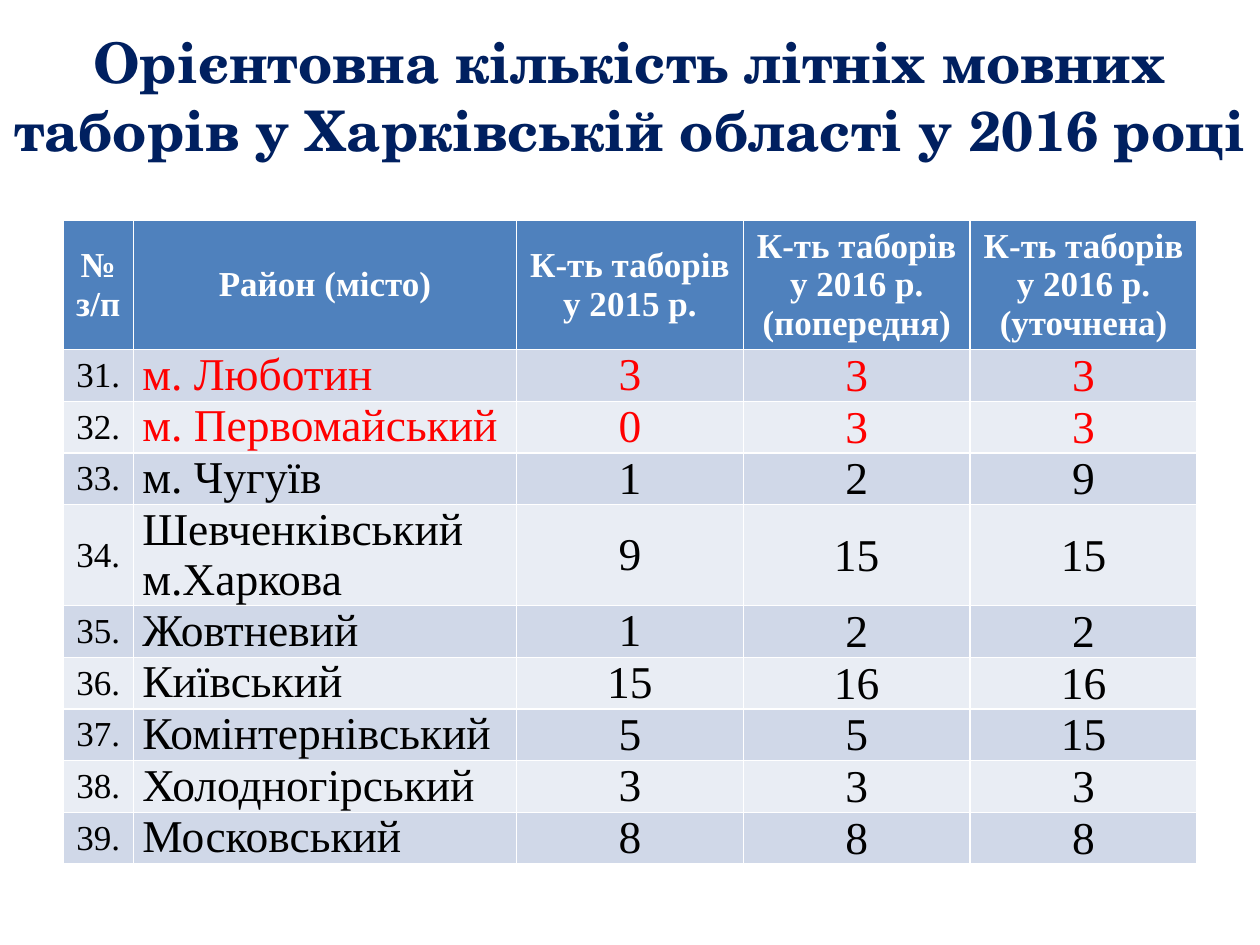
from typing import NamedTuple

from pptx import Presentation
from pptx.dml.color import RGBColor
from pptx.enum.text import MSO_ANCHOR as Anchor, MSO_AUTO_SIZE as AutoSize, PP_ALIGN as Align
from pptx.util import Inches, Pt

COLORS = {
    "title": "002060", "header": "4F81BD", "odd": "D0D8E8", "even": "E9EDF4",
    "white": "FFFFFF", "black": "000000", "red": "FF0000",
}
TITLE_FONT, TABLE_FONT = "TeX Gyre Schola", "Times New Roman"
WIDTH, HEIGHT = Inches(10), Inches(7.5)


class Style(NamedTuple):
    size: int
    align: Align = Align.CENTER
    anchor: Anchor = Anchor.MIDDLE
    insets: tuple = (0.1, 0.05, 0.1, 0.05)  # left, top, right, bottom


class District(NamedTuple):
    name: str
    camps_2015: int
    preliminary_2016: int
    refined_2016: int
    color: str = "black"


LABEL = Style(20)
NAME = Style(26, Align.LEFT, Anchor.TOP, (0.07, 0, 0.07, 0))
COUNT_2015 = Style(26, insets=(0.07, 0, 0.07, 0))
COUNT_2016 = Style(26, insets=(0.01, 0.01, 0.01, 0))
ROW_STYLES = (LABEL, NAME, COUNT_2015, COUNT_2016, COUNT_2016)

COLUMN_SHARES = (0.056, 0.304, 0.18, 0.18, 0.18)  # of the slide's width
ROW_HEIGHT = Inches(0.41)
FIRST_NUMBER = 31
HEADERS = (
    "№ з/п", "Район (місто)", "К-ть таборів у 2015 р.",
    "К-ть таборів у 2016 р. (попередня)", "К-ть таборів у 2016 р. (уточнена)",
)
DISTRICTS = (
    District("м.\u00a0Люботин", 3, 3, 3, "red"),
    District("м.\u00a0Первомайський", 0, 3, 3, "red"),
    District("м.\u00a0Чугуїв", 1, 2, 9),
    District("Шевченківський м.Харкова", 9, 15, 15),
    District("Жовтневий", 1, 2, 2),
    District("Київський", 15, 16, 16),
    District("Комінтернівський", 5, 5, 15),
    District("Холодногірський", 3, 3, 3),
    District("Московський", 8, 8, 8),
)


def rgb(name: str) -> RGBColor:
    return RGBColor.from_string(COLORS[name])


def format_paragraph(p, font: str, size: int, color: str, bold: bool, align: Align) -> None:
    p.alignment = align
    p.font.name, p.font.size, p.font.bold = font, Pt(size), bold
    p.font.color.rgb = rgb(color)


def fill_cell(cell, text: str, style: Style, color: str, fill: str, bold: bool = False) -> None:
    cell.text = text
    cell.vertical_anchor = style.anchor
    (cell.margin_left, cell.margin_top,
     cell.margin_right, cell.margin_bottom) = map(Inches, style.insets)
    cell.fill.solid()
    cell.fill.fore_color.rgb = rgb(fill)
    format_paragraph(cell.text_frame.paragraphs[0], TABLE_FONT, style.size, color, bold, style.align)


def add_title(s) -> None:
    title = s.shapes.title
    title.left, title.top, title.width, title.height = 0, Inches(0.13), WIDTH, Inches(1.25)
    tf = title.text_frame
    tf.text = "Орієнтовна кількість літніх мовних таборів у Харківській області у 2016 році"
    tf.word_wrap = True
    tf.auto_size = AutoSize.NONE
    tf.vertical_anchor = Anchor.MIDDLE
    format_paragraph(tf.paragraphs[0], TITLE_FONT, 32, "title", True, Align.CENTER)


def add_camp_table(s) -> None:
    rows = len(DISTRICTS) + 1
    table = s.shapes.add_table(
        rows, len(HEADERS), Inches(0.5), Inches(1.75),
        int(WIDTH * sum(COLUMN_SHARES)), ROW_HEIGHT * rows).table
    for column, share in zip(table.columns, COLUMN_SHARES):
        column.width = int(WIDTH * share)

    # Header row
    for col, text in enumerate(HEADERS):
        fill_cell(table.cell(0, col), text, LABEL, "white", "header", bold=True)

    # One banded row per district
    for row, d in enumerate(DISTRICTS, start=1):
        fill = "odd" if row % 2 else "even"
        values = (f"{FIRST_NUMBER + row - 1}.", d.name,
                  d.camps_2015, d.preliminary_2016, d.refined_2016)
        for col, (value, style) in enumerate(zip(values, ROW_STYLES)):
            color = d.color if col else "black"
            fill_cell(table.cell(row, col), str(value), style, color, fill)


def main() -> None:
    prs = Presentation()
    prs.slide_width, prs.slide_height = WIDTH, HEIGHT
    s = prs.slides.add_slide(prs.slide_layouts[5])
    add_title(s)
    add_camp_table(s)
    prs.save("out.pptx")


if __name__ == "__main__":
    main()
